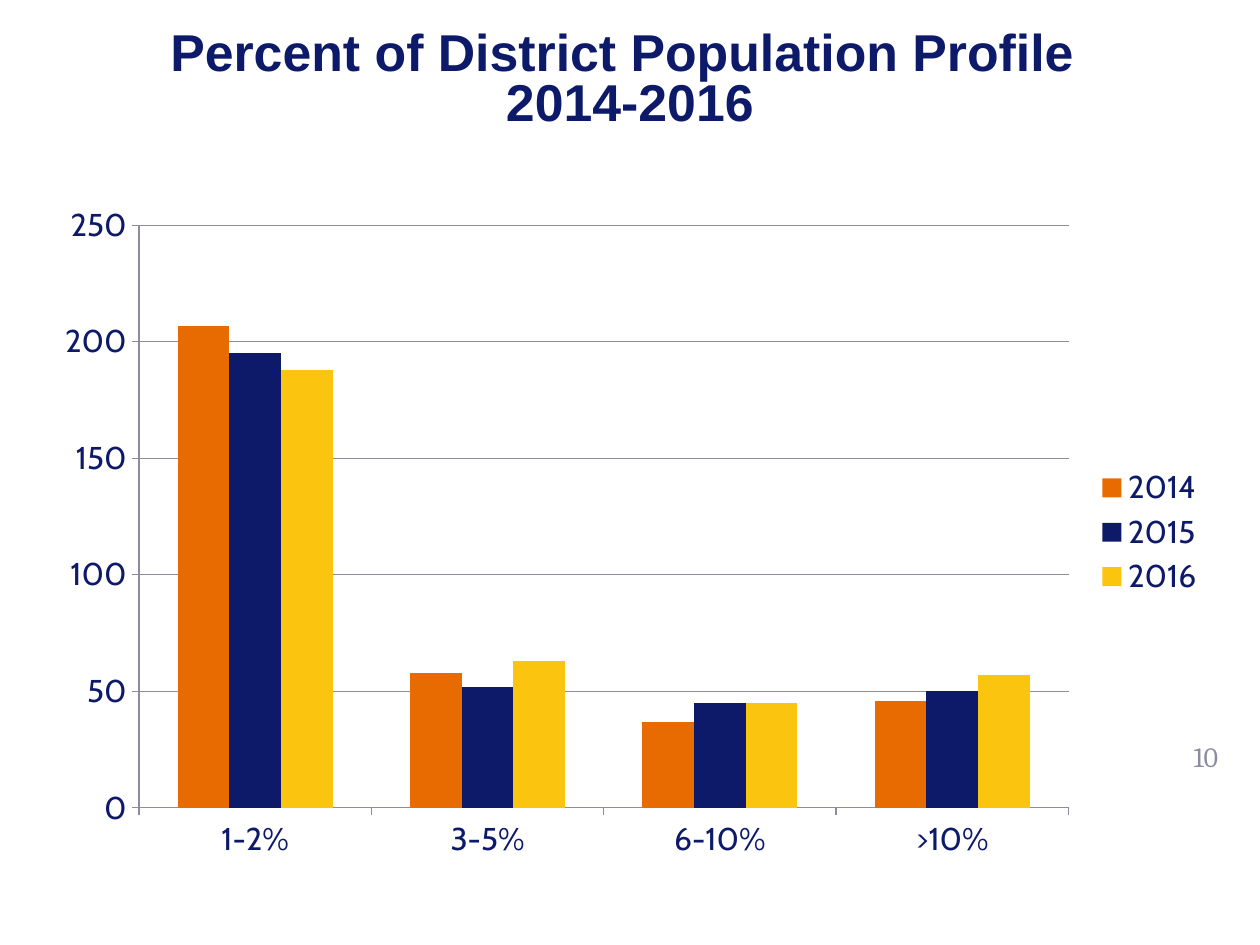
from pptx import Presentation
from pptx.chart.data import CategoryChartData
from pptx.dml.color import RGBColor
from pptx.enum.chart import XL_CHART_TYPE, XL_LEGEND_POSITION, XL_TICK_MARK
from pptx.enum.text import MSO_ANCHOR, MSO_AUTO_SIZE, PP_ALIGN
from pptx.util import Inches, Pt

TITLE = ["Percent of District Population Profile ", "2014-2016"]
PAGE_NUMBER = "10"
CATEGORIES = ["1-2%", "3-5%", "6-10%", ">10%"]
SERIES = [
    ("2014", (207, 58, 37, 46), "E86B01"),
    ("2015", (195, 52, 45, 50), "0D1969"),
    ("2016", (188, 63, 45, 57), "FBC40E"),
]
NAVY, GRAY, WHITE = "0D1969", "8C8CA1", "FFFFFF"


def box(left, top, width, height):
    return [Inches(v) for v in (left, top, width, height)]


def set_fill(fill, color):
    fill.solid()
    fill.fore_color.rgb = RGBColor.from_string(color)


def set_font(font, name, size, color, bold=False):
    font.name, font.size, font.bold = name, Pt(size), bold
    font.color.rgb = RGBColor.from_string(color)


def set_text(sp, lines, name, size, color, bold=False, spacing=None):
    tf = sp.text_frame
    tf.word_wrap = True
    tf.auto_size = MSO_AUTO_SIZE.NONE
    tf.vertical_anchor = MSO_ANCHOR.MIDDLE
    tf.text = "\n".join(lines)
    for p in tf.paragraphs:
        p.alignment = PP_ALIGN.CENTER
        p.line_spacing = spacing
        p.space_before = Pt(0)
        set_font(p.font, name, size, color, bold)


def add_column_chart(slide):
    data = CategoryChartData()
    data.categories = CATEGORIES
    for name, values, _ in SERIES:
        data.add_series(name, values)
    chart = slide.shapes.add_chart(
        XL_CHART_TYPE.COLUMN_CLUSTERED, *box(0.33, 1.53, 9.33, 5.39), data
    ).chart
    chart.has_title = False
    set_font(chart.font, "Cabin", 18, NAVY)
    chart.has_legend = True
    chart.legend.position = XL_LEGEND_POSITION.RIGHT
    chart.legend.include_in_layout = False

    plot = chart.plots[0]
    plot.gap_width, plot.overlap = 150, 0
    plot.vary_by_categories = False
    for series, (_, _, color) in zip(plot.series, SERIES):
        set_fill(series.format.fill, color)

    axis = chart.value_axis
    axis.minimum_scale, axis.maximum_scale, axis.major_unit = 0, 250, 50
    axis.has_major_gridlines = True
    for ax in (chart.category_axis, axis):
        ax.major_tick_mark = XL_TICK_MARK.OUTSIDE
        ax.minor_tick_mark = XL_TICK_MARK.NONE
    for lined in (chart.category_axis, axis, axis.major_gridlines):
        set_fill(lined.format.line.fill, GRAY)
        lined.format.line.width = Pt(0.75)


prs = Presentation()
prs.slide_width, prs.slide_height = Inches(10), Inches(7.5)
s = prs.slides.add_slide(prs.slide_layouts[5])

number = s.shapes.add_textbox(*box(9.28, 5.75, 0.58, 0.5))
set_text(number, [PAGE_NUMBER], "Cambria", 16, GRAY)

title = s.shapes.title
title.left, title.top, title.width, title.height = box(0.25, 0.17, 9.5, 0.95)
set_fill(title.fill, WHITE)
set_text(title, TITLE, "Arial", 29.6, NAVY, bold=True, spacing=0.8)

add_column_chart(s)
prs.save("out.pptx")
